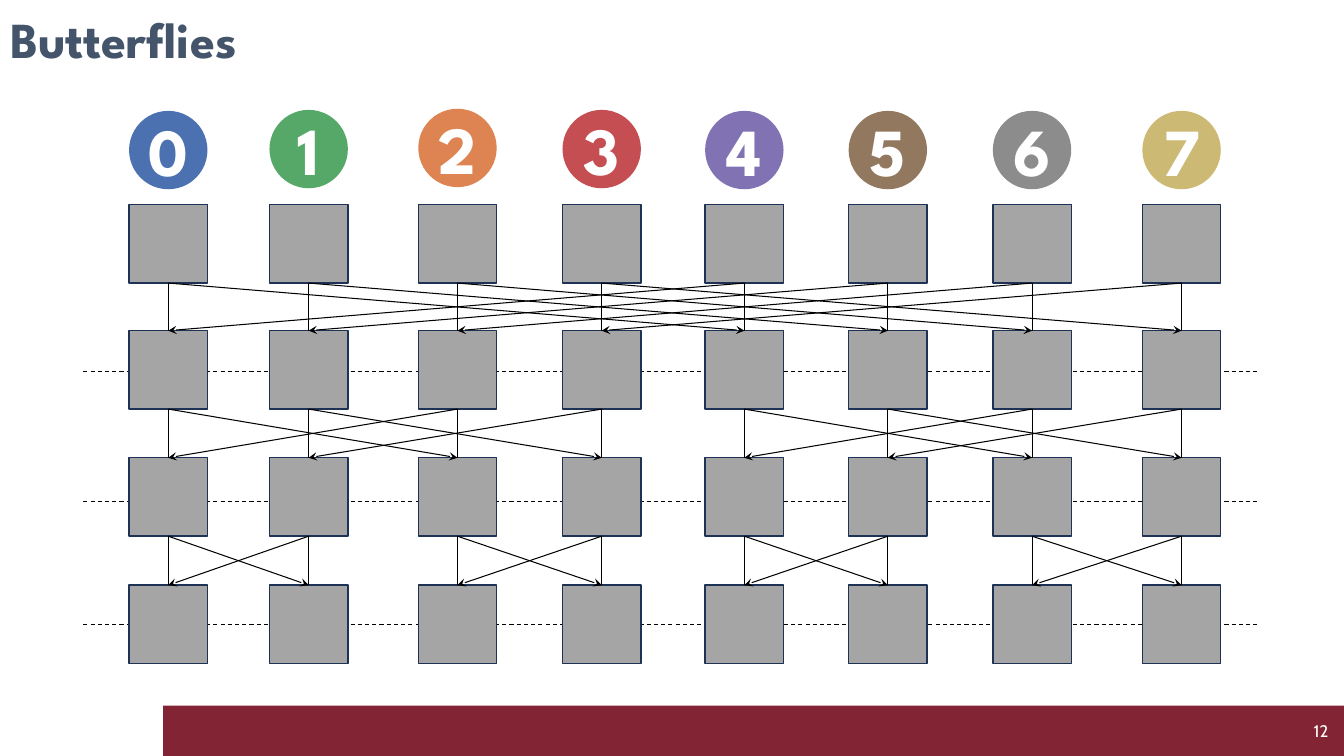
from dataclasses import dataclass

from lxml import etree
from pptx import Presentation
from pptx import util as u
from pptx.dml.color import RGBColor
from pptx.enum import dml, shapes, text
from pptx.oxml.ns import qn


@dataclass(frozen=True)
class Theme:
    title: str = "44546A"
    band: str = "822433"
    box: str = "A5A5A5"
    box_edge: str = "1E3256"
    link: str = "000000"
    light: str = "FFFFFF"
    nodes: tuple = ("4C71B0", "55A868", "DD8452", "C44E51",
                    "8172B3", "937860", "8C8C8C", "CCB974")
    heading_font: str = "League Spartan"
    body_font: str = "Cabin"
    title_size: int = 36
    node_size: int = 48
    number_size: int = 12


def rgb(color):
    return RGBColor.from_string(color)


def write(sp, words, *, font, size, color, bold=False,
          align=text.PP_ALIGN.LEFT, margins=(7.2, 3.6), spacing=None):
    tf = sp.text_frame
    tf.word_wrap = True
    tf.vertical_anchor = text.MSO_ANCHOR.MIDDLE
    tf.margin_left = tf.margin_right = u.Pt(margins[0])
    tf.margin_top = tf.margin_bottom = u.Pt(margins[1])
    p = tf.paragraphs[0]
    p.alignment = align
    if spacing:
        p.line_spacing = spacing
    r = p.add_run()
    r.text = words
    r.font.name, r.font.size, r.font.bold = font, u.Pt(size), bold
    r.font.color.rgb = rgb(color)


class Deck:
    def __init__(self, theme):
        self.theme = theme
        self.prs = Presentation()
        self.prs.slide_width, self.prs.slide_height = u.Pt(960), u.Pt(540)
        self.s = self.prs.slides.add_slide(self.prs.slide_layouts[5])

    def title(self, words, x, y, w, h):
        sp = self.s.shapes.title
        sp.left, sp.top, sp.width, sp.height = map(u.Pt, (x, y, w, h))
        t = self.theme
        write(sp, words, font=t.heading_font, size=t.title_size,
              color=t.title, bold=True, spacing=0.9)

    def shape(self, kind, x, y, w, h, fill, edge=None):
        sp = self.s.shapes.add_shape(kind, *map(u.Pt, (x, y, w, h)))
        sp.shadow.inherit = False
        sp.fill.solid()
        sp.fill.fore_color.rgb = rgb(fill)
        if edge:
            sp.line.color.rgb = rgb(edge)
            sp.line.width = u.Pt(1)
        else:
            sp.line.fill.background()
        return sp

    def box(self, x, y, side):
        return self.shape(shapes.MSO_SHAPE.RECTANGLE, x, y, side, side,
                          self.theme.box, self.theme.box_edge)

    def node(self, words, x, y, side, fill):
        sp = self.shape(shapes.MSO_SHAPE.OVAL, x, y, side, side, fill)
        t = self.theme
        write(sp, words, font=t.heading_font, size=t.node_size, color=t.light,
              bold=True, align=text.PP_ALIGN.CENTER, margins=(0, 0))

    def page_number(self, words, x, y, w, h):
        sp = self.s.shapes.add_textbox(*map(u.Pt, (x, y, w, h)))
        t = self.theme
        write(sp, words, font=t.body_font, size=t.number_size,
              color=t.light, align=text.PP_ALIGN.RIGHT)

    def line(self, x1=0, y1=0, x2=0, y2=0, dashed=False, arrow=False):
        c = self.s.shapes.add_connector(
            shapes.MSO_CONNECTOR.STRAIGHT, *map(u.Pt, (x1, y1, x2, y2)))
        c.line.color.rgb = rgb(self.theme.link)
        c.line.width = u.Pt(0.75)
        if dashed:
            c.line.dash_style = dml.MSO_LINE.DASH
        spPr = c._element.spPr
        if arrow:
            etree.SubElement(spPr.find(qn("a:ln")), qn("a:tailEnd"),
                             type="stealth")
        etree.SubElement(spPr, qn("a:effectLst"))
        return c

    def link(self, upper, lower, arrow):
        c = self.line(arrow=arrow)
        c.begin_connect(upper, 2)
        c.end_connect(lower, 0)


COLUMNS = (92.2, 192.5, 298.8, 401.8, 503.7, 606.2, 709.2, 816)
NODE_TOPS = (79.2, 78.5, 77.7, 78.5, 79.2, 79.2, 79.2, 79.2)
SIDE = 56
FIRST_ROW = 146.2
# Each stage: top of its boxes, height of its dashed line, exchange distance
STAGES = ((236.2, 265.5, 4), (327, 358.3, 2), (418, 446.2, 1))


def main():
    theme = Theme()
    deck = Deck(theme)

    # Footer band, title and page number
    deck.shape(shapes.MSO_SHAPE.RECTANGLE, 116.5, 504, 843.5, 36, theme.band)
    deck.title("Butterflies", 0, 0, 894, 60)
    deck.page_number("12", 740, 507.6, 216, 28.8)

    # Numbered nodes above the first row of boxes
    for i, (x, y, fill) in enumerate(zip(COLUMNS, NODE_TOPS, theme.nodes)):
        deck.node(str(i), x, y, SIDE, fill)
    upper = [deck.box(x, FIRST_ROW, SIDE) for x in COLUMNS]

    # Exchange stages: each column keeps its value and swaps with a partner
    for top, dash_y, distance in STAGES:
        deck.line(59.5, dash_y, 900, dash_y, dashed=True)
        lower = [deck.box(x, top, SIDE) for x in COLUMNS]
        for i, sp in enumerate(upper):
            deck.link(sp, lower[i], arrow=False)
            deck.link(sp, lower[i ^ distance], arrow=True)
        upper = lower

    deck.prs.save("out.pptx")


if __name__ == "__main__":
    main()
